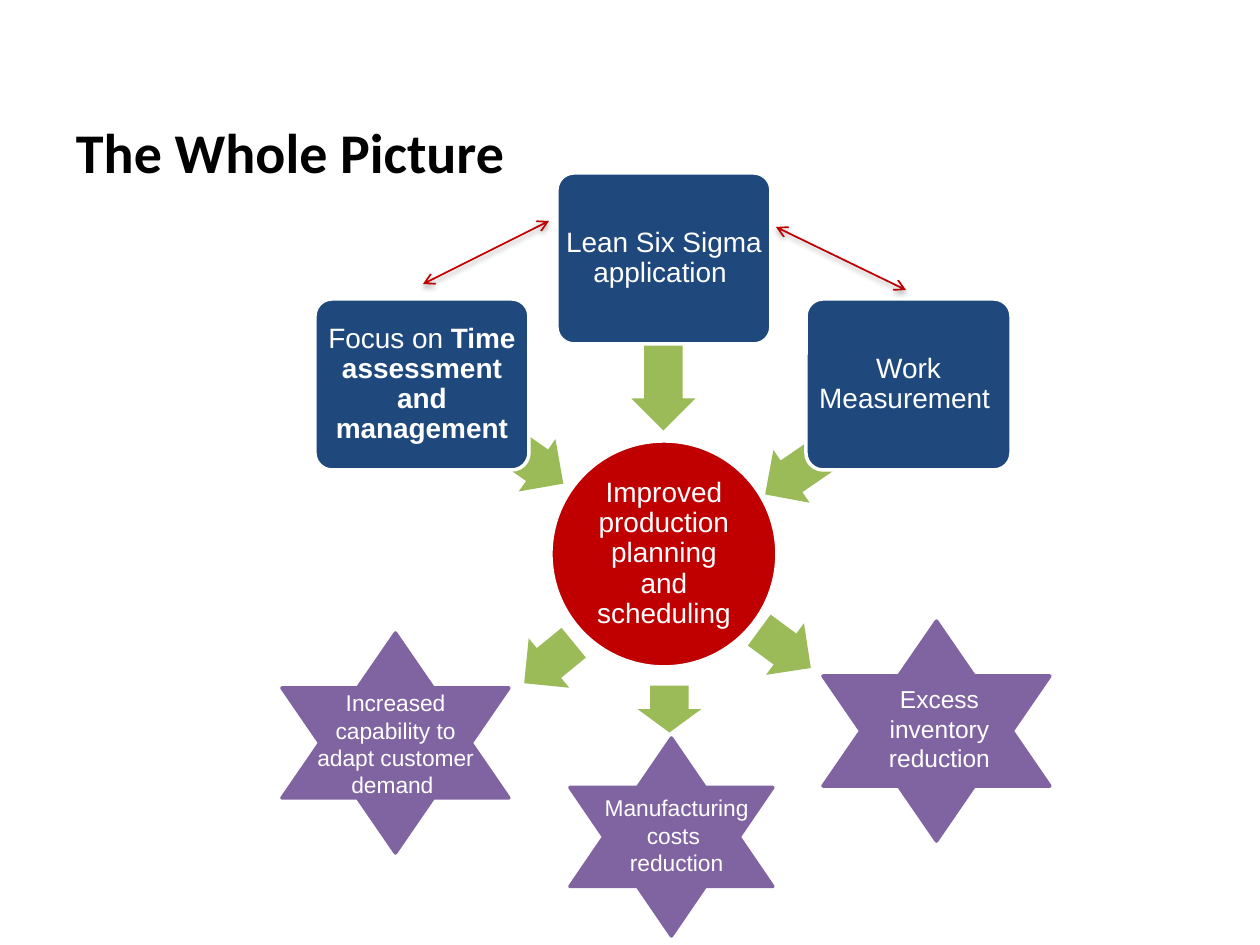
import pptx
import pptx.dml.color
import pptx.enum.shapes
import pptx.enum.text
import pptx.oxml
import pptx.oxml.ns
import pptx.util

SCALE = 914400 / 126
COLORS = {
    "ink": "000000",
    "white": "FFFFFF",
    "navy": "1F497D",
    "red": "C00000",
    "green": "9BBB59",
    "purple": "8064A2",
}
SHAPES = pptx.enum.shapes.MSO_SHAPE
ANCHORS = pptx.enum.text.MSO_ANCHOR
CENTER = pptx.enum.text.PP_ALIGN.CENTER


def px(length):
    return round(length * SCALE)


def color(name):
    return pptx.dml.color.RGBColor.from_string(COLORS[name])


def apply(target, values):
    for name, value in values.items():
        setattr(target, name, value)


def margins(size):
    return {f"margin_{side}": px(size) for side in ("left", "top", "right", "bottom")}


def add_span(para, text, size, ink="white", bold=False, font="Arial"):
    span = para.add_run()
    span.text = text
    apply(span.font, {"name": font, "size": pptx.util.Pt(size), "bold": bold})
    span.font.color.rgb = color(ink)


def add_shape(page, kind, at, fill, outline=None, rotation=0):
    shape = page.shapes.add_shape(kind, *map(px, at))
    shape.shadow.inherit = False
    shape.rotation = rotation
    shape.fill.solid()
    shape.fill.fore_color.rgb = color(fill)
    if outline:
        shape.line.color.rgb = color(outline)
        shape.line.width = pptx.util.Pt(2)
    else:
        shape.line.fill.background()
    return shape


def add_node(page, kind, at, fill, spans, inset):
    node = add_shape(page, kind, at, fill, "white")
    if kind == SHAPES.ROUNDED_RECTANGLE:
        node.adjustments[0] = 0.1
    frame = node.text_frame
    apply(frame, {"word_wrap": True, "vertical_anchor": ANCHORS.MIDDLE, **margins(inset)})
    para = frame.paragraphs[0]
    apply(para, {"alignment": CENTER, "line_spacing": 0.9})
    for text, bold in spans:
        add_span(para, text, 16, bold=bold)


def add_block_arrow(page, at, rotation):
    arrow = add_shape(page, SHAPES.LEFT_ARROW, at, "green", rotation=rotation)
    arrow.adjustments[0] = 0.6
    arrow.adjustments[1] = 0.5


def add_label(page, at, size, lines):
    box = page.shapes.add_textbox(*map(px, at))
    frame = box.text_frame
    apply(frame, {
        "word_wrap": True,
        "auto_size": pptx.enum.text.MSO_AUTO_SIZE.SHAPE_TO_FIT_TEXT,
    })
    for index, text in enumerate(lines):
        para = frame.add_paragraph() if index else frame.paragraphs[0]
        para.alignment = CENTER
        add_span(para, text, size)


def add_link(page, start, end):
    link = page.shapes.add_connector(
        pptx.enum.shapes.MSO_CONNECTOR.STRAIGHT, *map(px, start + end))
    link.line.color.rgb = color("red")
    link.line.width = pptx.util.Pt(1)
    outline = link.line._get_or_add_ln()
    namespace = pptx.oxml.ns.nsdecls("a")
    for tip in ("headEnd", "tailEnd"):
        outline.append(pptx.oxml.parse_xml(f'<a:{tip} {namespace} type="arrow"/>'))
    link._element.spPr.append(pptx.oxml.parse_xml(
        f'<a:effectLst {namespace}>'
        '<a:outerShdw blurRad="40000" dist="23000" dir="5400000" rotWithShape="0">'
        f'<a:srgbClr val="{COLORS["ink"]}"><a:alpha val="35000"/></a:srgbClr>'
        '</a:outerShdw></a:effectLst>'))


def set_title(page, text):
    title = page.shapes.title
    apply(title, dict(zip(("left", "top", "width", "height"), map(px, (63, 96, 1134, 89)))))
    frame = title.text_frame
    apply(frame, {
        "word_wrap": True,
        "auto_size": pptx.enum.text.MSO_AUTO_SIZE.NONE,
        "vertical_anchor": ANCHORS.TOP,
        **margins(13),
    })
    para = frame.paragraphs[0]
    apply(para, {"alignment": pptx.enum.text.PP_ALIGN.LEFT, "line_spacing": 1.12})
    add_span(para, text, 32, "ink", True, "Calibri")


def main():
    deck = pptx.Presentation()
    apply(deck, {"slide_width": px(1260), "slide_height": px(945)})
    page = deck.slides.add_slide(deck.slide_layouts[5])

    for at in ((823, 621, 227, 220), (282, 633, 227, 220), (570, 738, 203, 198)):
        add_shape(page, SHAPES.STAR_6_POINT, at, "purple", "purple")
    set_title(page, "The Whole Picture")

    add_node(page, SHAPES.OVAL, (551, 441, 226, 226), "red",
             [("Improved production planning and scheduling", False)], 1)
    inputs = (
        ((406, 402, 173, 64), 215, (315, 299, 214, 171),
         [("Focus on ", False), ("Time assessment and management", True)]),
        ((577, 312, 173, 64), 270, (557, 173, 214, 171),
         [("Lean Six Sigma application ", False)]),
        ((752, 420, 150, 64), 325.5, (806, 299, 205, 171),
         [("Work Measurement ", False)]),
    )
    for arrow_at, rotation, node_at, spans in inputs:
        add_block_arrow(page, arrow_at, rotation)
        add_node(page, SHAPES.ROUNDED_RECTANGLE, node_at, "navy", spans, 4)

    for at, rotation in (
        ((517, 631, 64, 64), 320.7),
        ((646, 677, 47, 64), 270),
        ((753, 617, 64, 64), 216.3),
    ):
        add_block_arrow(page, at, rotation)

    for at, size, lines in (
        ((866, 678, 147, 102), 14, ["Excess inventory reduction"]),
        ((578, 788, 197, 125), 13, ["Manufacturing costs ", "reduction"]),
        ((297, 683, 197, 123), 13, ["Increased capability to adapt customer demand "]),
    ):
        add_label(page, at, size, lines)

    add_link(page, (423, 284), (549, 221))
    add_link(page, (776, 227), (906, 290))
    deck.save("out.pptx")


if __name__ == "__main__":
    main()
